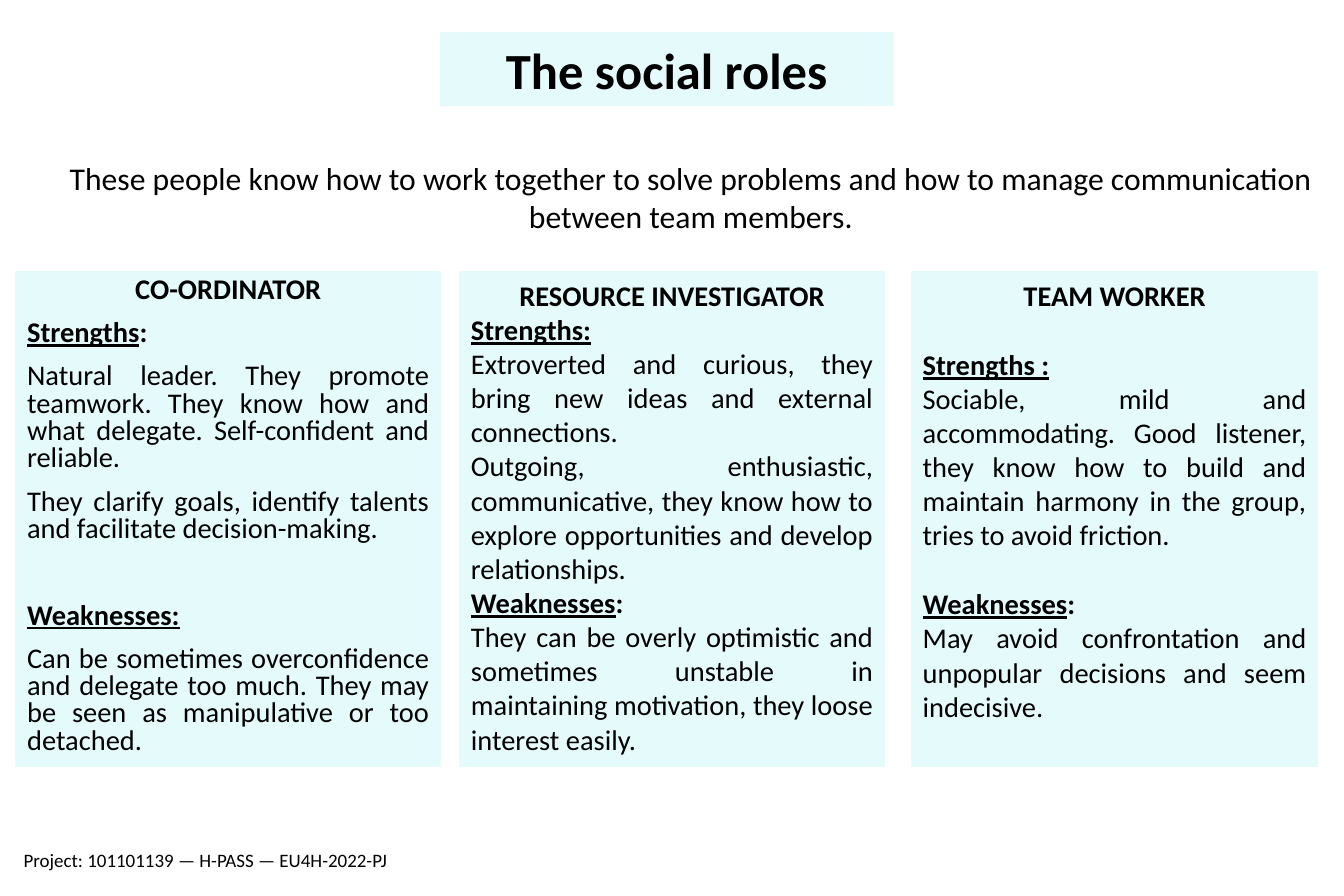
from pptx import Presentation
from pptx.dml.color import RGBColor
from pptx.enum.shapes import MSO_SHAPE as SHAPE
from pptx.enum.text import MSO_ANCHOR as ANCHOR, MSO_AUTO_SIZE as AUTOSIZE, PP_ALIGN as ALIGN
from pptx.util import Pt

BLACK = RGBColor(0x00, 0x00, 0x00)
PALE_CYAN = RGBColor(0xE5, 0xFB, 0xFB)

COLUMN_TOP, COLUMN_HEIGHT = 172.1, 312.5

# Left, width, line spacing, space between paragraphs, role name,
# then sections: underlined heading, its plain ending, space before, paragraphs
ROLES = [
    (10.1, 268.6, 0.8, 10, "CO-ORDINATOR", [
        ("Strengths", ":", 10, [
            "Natural leader. They promote teamwork. They know how and what "
            "delegate. Self-confident and reliable.",
            "They clarify goals, identify talents and facilitate decision-making."]),
        ("Weaknesses:", "", 37.5, [
            "Can be sometimes overconfidence and delegate too much. They may be "
            "seen as manipulative or too detached."]),
    ]),
    (290.9, 268.6, 1.0, 0, "RESOURCE INVESTIGATOR", [
        ("Strengths:", "", 0, [
            "Extroverted and curious, they bring new ideas and external connections.",
            "Outgoing, enthusiastic, communicative, they know how to explore "
            "opportunities and develop relationships."]),
        ("Weaknesses", ":", 0, [
            "They can be overly optimistic and sometimes unstable in maintaining "
            "motivation, they loose interest easily."]),
    ]),
    (576.7, 257, 1.0, 0, "TEAM WORKER", [
        ("Strengths :", "", 22, [
            "Sociable, mild and accommodating. Good listener, they know how to "
            "build and maintain harmony in the group, tries to avoid friction."]),
        ("Weaknesses", ":", 22, [
            "May avoid confrontation and unpopular decisions and seem indecisive."]),
    ]),
]


def add_run(p, text, size, bold=False, underline=False):
    r = p.add_run()
    r.text = text
    font = {"name": "Calibri", "size": Pt(size), "bold": bold, "underline": underline}
    for name, value in font.items():
        setattr(r.font, name, value)
    r.font.color.rgb = BLACK


def format_paragraph(p, align, spacing=1.0, before=0):
    layout = {"alignment": align, "line_spacing": spacing, "space_before": Pt(before)}
    for name, value in layout.items():
        setattr(p, name, value)


def prepare_frame(sp):
    tf = sp.text_frame
    frame = {"word_wrap": True, "auto_size": AUTOSIZE.NONE, "vertical_anchor": ANCHOR.TOP}
    for name, value in frame.items():
        setattr(tf, name, value)
    return tf


def paint_panel(sp):
    sp.fill.solid()
    sp.fill.fore_color.rgb = PALE_CYAN
    sp.line.color.rgb = PALE_CYAN
    sp.line.width = Pt(0.75)


def add_title(s, text, left, top, width, height):
    sp = s.shapes.title
    place = {"left": left, "top": top, "width": width, "height": height}
    for name, value in place.items():
        setattr(sp, name, Pt(value))
    paint_panel(sp)
    p = prepare_frame(sp).paragraphs[0]
    format_paragraph(p, ALIGN.CENTER)
    add_run(p, text, 32, bold=True)


def add_text(s, text, left, top, width, height, size, align):
    sp = s.shapes.add_textbox(Pt(left), Pt(top), Pt(width), Pt(height))
    p = prepare_frame(sp).paragraphs[0]
    format_paragraph(p, align)
    add_run(p, text, size)


def add_role(s, left, width, spacing, gap, role, sections):
    sp = s.shapes.add_shape(SHAPE.RECTANGLE, Pt(left), Pt(COLUMN_TOP),
                            Pt(width), Pt(COLUMN_HEIGHT))
    sp.shadow.inherit = False
    paint_panel(sp)
    tf = prepare_frame(sp)
    p = tf.paragraphs[0]
    format_paragraph(p, ALIGN.CENTER, spacing)
    add_run(p, role, 18, bold=True)
    for heading, ending, before, paragraphs in sections:
        p = tf.add_paragraph()
        format_paragraph(p, ALIGN.JUSTIFY, spacing, before)
        add_run(p, heading, 18, bold=True, underline=True)
        if ending:
            add_run(p, ending, 18, bold=True)
        for text in paragraphs:
            p = tf.add_paragraph()
            format_paragraph(p, ALIGN.JUSTIFY, spacing, gap)
            add_run(p, text, 18)


def main():
    prs = Presentation()
    prs.slide_width, prs.slide_height = Pt(850.32), Pt(566.64)
    s = prs.slides.add_slide(prs.slide_layouts[5])

    # Title and introduction
    add_title(s, "The social roles", 278.6, 20.9, 286.6, 46.1)
    add_text(s, "These people know how to work together to solve problems and how to "
             "manage communication between team members.",
             23.8, 97.2, 826.5, 55.4, 20, ALIGN.CENTER)

    # One panel per role
    for role in ROLES:
        add_role(s, *role)

    # Project reference
    add_text(s, "Project: 101101139 — H-PASS — EU4H-2022-PJ",
             7.9, 532.8, 261.4, 19.4, 12, ALIGN.LEFT)
    prs.save("out.pptx")


if __name__ == "__main__":
    main()
